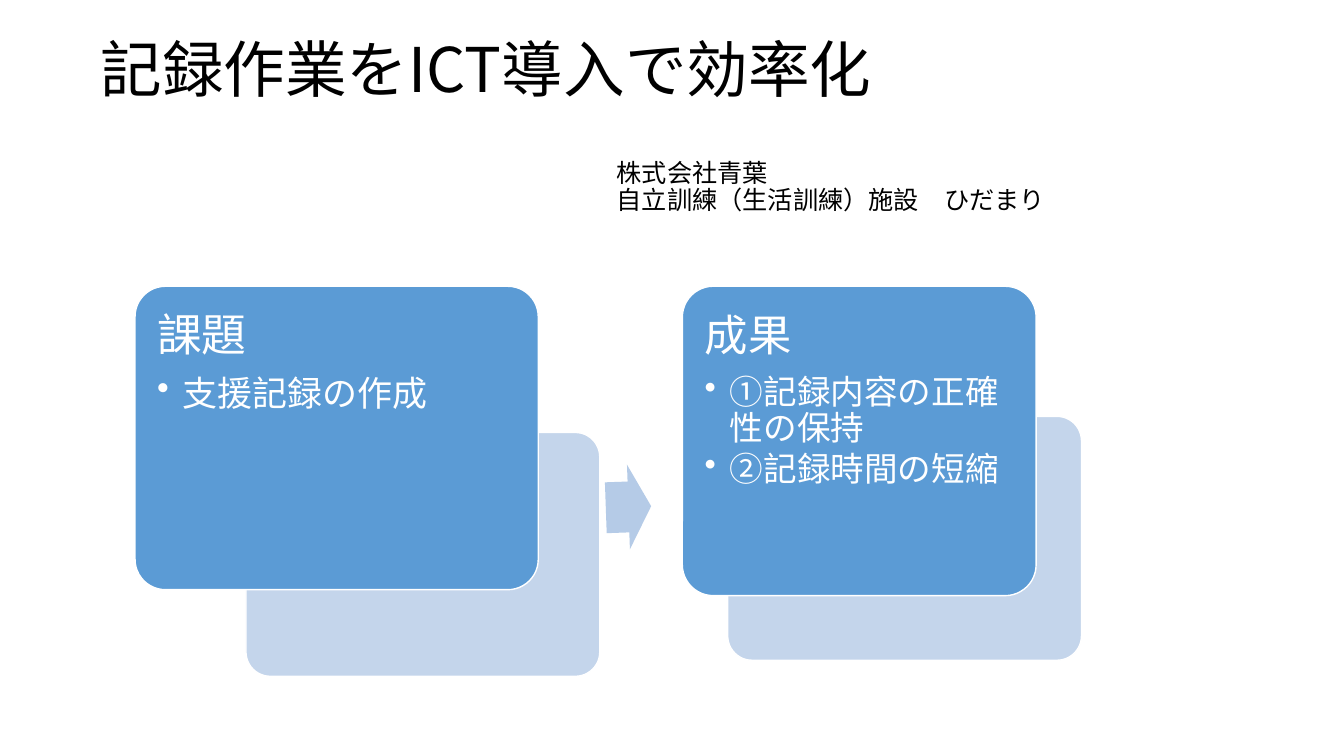
from lxml import etree
from pptx import Presentation
from pptx.dml.color import RGBColor
from pptx.enum.shapes import MSO_SHAPE
from pptx.enum.text import MSO_ANCHOR, PP_ALIGN
from pptx.oxml.ns import qn
from pptx.util import Pt

ROUNDED = MSO_SHAPE.ROUNDED_RECTANGLE
RIGHT_ARROW = MSO_SHAPE.RIGHT_ARROW
TOP, MIDDLE = MSO_ANCHOR.TOP, MSO_ANCHOR.MIDDLE
LEFT = PP_ALIGN.LEFT

FONT = "Noto Sans CJK JP"
COLORS = {"text": "000000", "white": "FFFFFF", "card": "5B9BD5",
          "backing": "C4D5EB", "arrow": "B5CBE7"}
BACKING_SIZE = (252.7, 174.2)
CARD_TOP = 204.5
CARD_INSET = 9.5
BULLET_INDENT = 18


class SlideBuilder:
    def __init__(self, slide, font, colors):
        self.slide = slide
        self.font = font
        self.colors = colors

    def color(self, name):
        return RGBColor.from_string(self.colors[name])

    def shape(self, kind, box, fill, adjustments, outline=None, rotation=0):
        shape = self.slide.shapes.add_shape(kind, *map(Pt, box))
        shape.shadow.inherit = False
        shape.rotation = rotation
        for index, value in enumerate(adjustments):
            shape.adjustments[index] = value
        shape.fill.solid()
        shape.fill.fore_color.rgb = self.color(fill)
        if outline:
            shape.line.color.rgb = self.color(outline)
            shape.line.width = Pt(1)
        else:
            shape.line.fill.background()
        return shape

    def paragraph(self, paragraph, text, size, color, spacing, after=0, bullet=False):
        paragraph.text = text
        paragraph.alignment = LEFT
        paragraph.line_spacing = spacing
        paragraph.space_after = Pt(after)
        paragraph.font.size = Pt(size)
        paragraph.font.color.rgb = self.color(color)
        paragraph.font.name = self.font
        # East Asian typeface and bullet
        properties = paragraph._p.get_or_add_pPr()
        defaults = properties.find(qn("a:defRPr"))
        etree.SubElement(defaults, qn("a:ea"), typeface=self.font)
        if bullet:
            paragraph.level = 1
            properties.set("marL", str(Pt(BULLET_INDENT)))
            properties.set("indent", str(-Pt(BULLET_INDENT)))
            mark = etree.Element(qn("a:buChar"), char="•")
            defaults.addprevious(mark)

    def text(self, box, lines, size, spacing):
        frame = self.slide.shapes.add_textbox(*map(Pt, box)).text_frame
        frame.word_wrap = True
        frame.vertical_anchor = MIDDLE
        for index, line in enumerate(lines):
            paragraph = frame.add_paragraph() if index else frame.paragraphs[0]
            self.paragraph(paragraph, line, size, "text", spacing)

    def card(self, box, backing_at, heading, points, heading_size, point_size):
        self.shape(ROUNDED, backing_at + BACKING_SIZE, "backing", [0.1], "white")
        frame = self.shape(ROUNDED, box, "card", [0.1], "white").text_frame
        frame.word_wrap = True
        frame.vertical_anchor = TOP
        frame.margin_left = frame.margin_right = Pt(CARD_INSET)
        frame.margin_top = frame.margin_bottom = Pt(CARD_INSET)
        self.paragraph(frame.paragraphs[0], heading, heading_size, "white",
                       Pt(37), after=0.35 * heading_size)
        for point in points:
            self.paragraph(frame.add_paragraph(), point, point_size, "white",
                           Pt(1.07 * point_size), after=0.15 * point_size, bullet=True)


def main():
    presentation = Presentation()
    presentation.slide_width, presentation.slide_height = Pt(960), Pt(540)
    slide = presentation.slides.add_slide(presentation.slide_layouts[6])
    builder = SlideBuilder(slide, FONT, COLORS)

    # Title
    builder.text((64.8, 16.5, 828, 71.3), ["記録作業をICT導入で効率化"], 44, 0.9)

    # Issue, arrow, outcome
    builder.card((96.5, CARD_TOP, 288, 216.7), (175.7, 308.9),
                 "課題", ["支援記録の作成"], 32, 25)
    builder.shape(RIGHT_ARROW, (432.7, 331.9, 32.4, 60.5), "arrow", [0.6, 0.5],
                  rotation=358)
    builder.card((487.4, CARD_TOP, 252.7, 221), (519.8, 297.4),
                 "成果", ["①記録内容の正確性の保持", "②記録時間の短縮"], 31, 24)

    # Organisation
    builder.text((433.4, 101.5, 400.3, 64.8),
                 ["株式会社青葉", "自立訓練（生活訓練）施設　ひだまり"], 18, Pt(19.3))

    presentation.save("out.pptx")


if __name__ == "__main__":
    main()
